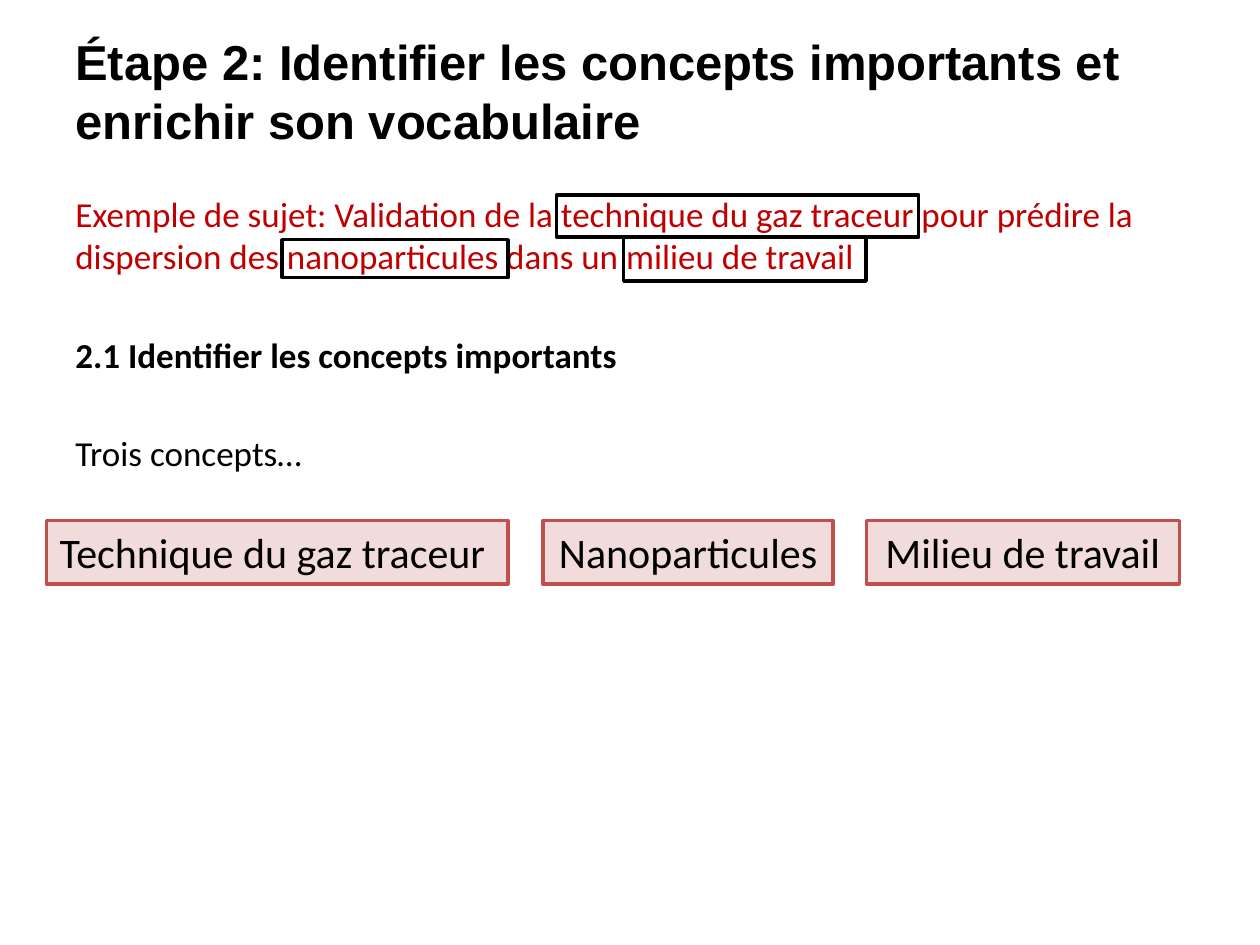
from pptx import Presentation
from pptx.dml.color import RGBColor
from pptx.enum.shapes import MSO_SHAPE
from pptx.enum.text import MSO_ANCHOR, PP_ALIGN
from pptx.util import Pt

RECT = MSO_SHAPE.RECTANGLE
TOP, MIDDLE = MSO_ANCHOR.TOP, MSO_ANCHOR.MIDDLE
LEFT, CENTER = PP_ALIGN.LEFT, PP_ALIGN.CENTER

COLORS = {"black": "000000", "topic": "C00000", "fill": "F2DCDB", "edge": "C0504D"}


class Deck:
    def __init__(self, width, height):
        self.prs = Presentation()
        self.prs.slide_width, self.prs.slide_height = Pt(width), Pt(height)
        self.s = self.prs.slides.add_slide(self.prs.slide_layouts[6])

    def color(self, name):
        return RGBColor.from_string(COLORS[name])

    def style(self, p, size, font="Calibri", color="black", bold=False, align=LEFT):
        p.alignment = align
        for r in p.runs:
            r.font.name, r.font.size, r.font.bold = font, Pt(size), bold
            r.font.color.rgb = self.color(color)

    def text(self, box, paragraphs, anchor=TOP, gap=0):
        """Add a text box; paragraphs are (text, style) pairs."""
        tf = self.s.shapes.add_textbox(*map(Pt, box)).text_frame
        tf.word_wrap = True
        tf.vertical_anchor = anchor
        for i, (text, style) in enumerate(paragraphs):
            p = tf.add_paragraph() if i else tf.paragraphs[0]
            p.text = text
            p.space_before = Pt(gap if i else 0)
            self.style(p, **style)

    def frame(self, box, line="black", fill=None):
        sp = self.s.shapes.add_shape(RECT, *map(Pt, box))
        sp.shadow.inherit = False
        sp.line.color.rgb, sp.line.width = self.color(line), Pt(2)
        if fill:
            sp.fill.solid()
            sp.fill.fore_color.rgb = self.color(fill)
        else:
            sp.fill.background()
        return sp

    def label(self, box, text):
        tf = self.frame(box, "edge", "fill").text_frame
        tf.word_wrap = True
        tf.vertical_anchor = TOP
        tf.text = text
        self.style(tf.paragraphs[0], 24, align=CENTER)


def main():
    deck = Deck(720, 540)

    # Title
    deck.text((36, 6.5, 648, 90), [
        ("Étape 2: Identifier les concepts importants et enrichir son vocabulaire",
         dict(size=28, font="Arial", bold=True))], anchor=MIDDLE)

    # Topic, subheading and lead-in
    deck.text((36, 106.5, 648, 356.5), [
        ("Exemple de sujet: Validation de la technique du gaz traceur pour prédire "
         "la dispersion des nanoparticules dans un milieu de travail",
         dict(size=20, color="topic")),
        ("2.1 Identifier les concepts importants", dict(size=20, bold=True)),
        ("Trois concepts…", dict(size=20))], gap=32.3)

    # Frames around the concepts in the topic
    for box in ((318, 111.6, 207, 23.8), (356.4, 135.4, 138.5, 25.2),
                (161.3, 137, 129, 21.6)):
        deck.frame(box)

    # Row of concepts
    for left, width, text in ((26.6, 263.6, "Technique du gaz traceur "),
                              (310.3, 165.8, "Nanoparticules"),
                              (495, 178.9, "Milieu de travail")):
        deck.label((left, 297.4, width, 36.3), text)

    deck.prs.save("out.pptx")


if __name__ == "__main__":
    main()
